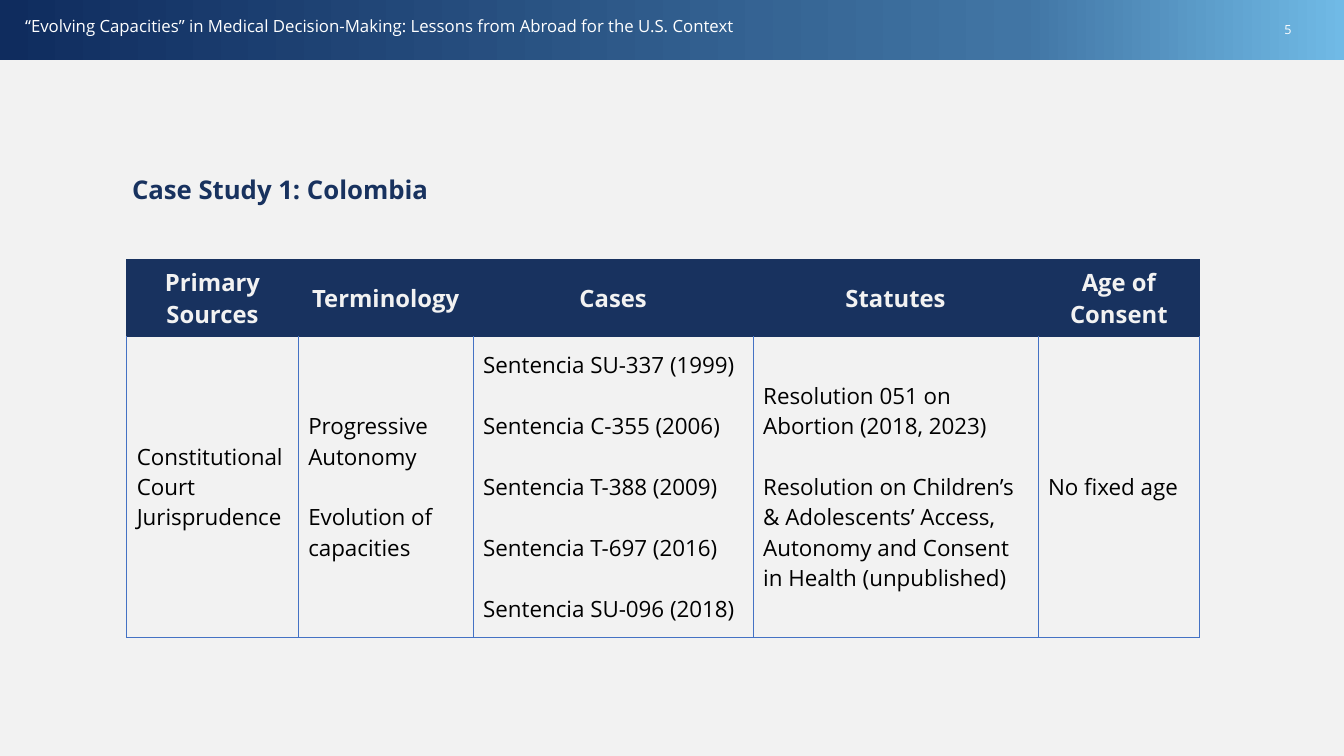
from copy import deepcopy

from lxml.etree import SubElement
from pptx import Presentation
from pptx.dml.color import RGBColor
from pptx.enum.shapes import MSO_SHAPE
from pptx.enum.text import MSO_ANCHOR, MSO_AUTO_SIZE, PP_ALIGN
from pptx.oxml.ns import qn
from pptx.util import Pt

NAVY, PALE, WHITE, BLACK, BLUE = "18325F", "F2F2F2", "FFFFFF", "000000", "4472C4"
FONT = "Open Sans"
HEADINGS = ["Primary Sources", "Terminology", "Cases", "Statutes", "Age of Consent"]
DETAILS = [
    ["Constitutional Court Jurisprudence"],
    ["Progressive Autonomy", "Evolution of capacities"],
    ["Sentencia SU-337 (1999)", "Sentencia C-355 (2006)", "Sentencia T-388 (2009)",
     "Sentencia T-697 (2016)", "Sentencia SU-096 (2018)"],
    ["Resolution 051 on Abortion (2018, 2023)",
     "Resolution on Children’s & Adolescents’ Access, Autonomy and Consent in Health (unpublished)"],
    ["No fixed age"],
]
COLUMNS = [122.5, 125, 200, 203.5, 115.5]
ROWS = [55, 214.5]


def rgb(color):
    return RGBColor.from_string(color)


def write(tf, lines, size, color, bold=False, align=PP_ALIGN.LEFT, spacing=1.0, gap=0):
    tf.word_wrap = True
    for i, line in enumerate(lines):
        p = tf.paragraphs[0] if i == 0 else tf.add_paragraph()
        p.alignment = align
        p.line_spacing = spacing
        p.space_before = Pt(gap if i else 0)
        r = p.add_run()
        r.text = line
        r.font.name = FONT
        r.font.size = Pt(size)
        r.font.bold = bold
        r.font.color.rgb = rgb(color)


def place(sp, x, y, w, h, anchor=MSO_ANCHOR.TOP):
    sp.left, sp.top, sp.width, sp.height = Pt(x), Pt(y), Pt(w), Pt(h)
    tf = sp.text_frame
    tf.auto_size = MSO_AUTO_SIZE.NONE
    tf.vertical_anchor = anchor
    tf.margin_left = tf.margin_right = tf.margin_top = tf.margin_bottom = Pt(3.6)
    return tf


def add_text(s, text, x, y, w, h, anchor=MSO_ANCHOR.TOP, **fmt):
    sp = s.shapes.add_textbox(Pt(x), Pt(y), Pt(w), Pt(h))
    write(place(sp, x, y, w, h, anchor), [text], **fmt)


def add_banner(s, x, y, w, h):
    sp = s.shapes.add_shape(MSO_SHAPE.RECTANGLE, Pt(x), Pt(y), Pt(w), Pt(h))
    sp.shadow.inherit = False
    sp.line.fill.background()
    sp.fill.gradient()
    sp.fill.gradient_angle = 0
    first = sp.fill._fill.gradient_stops[0]._gs
    first.addnext(deepcopy(first))
    stops = [(0, "0F2C5E"), (0.76, "4175A4"), (1, "70BAE6")]
    for stop, (position, color) in zip(sp.fill.gradient_stops, stops):
        stop.position = position
        stop.color.rgb = rgb(color)
    add_text(s, "“Evolving Capacities” in Medical Decision-Making: Lessons from Abroad for the U.S. Context",
             x + 14.4, y + 13, 842.4, 18.7, size=12, color=WHITE, spacing=0.8)
    add_text(s, "5", x + w - 46.2, y + 14.4, 12.2, 18, MSO_ANCHOR.MIDDLE,
             size=9, color=WHITE, align=PP_ALIGN.RIGHT)


def add_title(s, x, y, w, h):
    write(place(s.shapes.title, x, y, w, h), ["Case Study 1: Colombia"],
          18.4, NAVY, bold=True, spacing=0.7)


def set_borders(cell, **colors):
    tcPr = cell._tc.get_or_add_tcPr()
    for side in "LRTB":
        ln = SubElement(tcPr, qn(f"a:ln{side}"), w=str(Pt(0.75)))
        fill = SubElement(ln, qn("a:solidFill"))
        SubElement(fill, qn("a:srgbClr"), val=colors[side])


def add_case_table(s, x, y):
    frame = s.shapes.add_table(2, len(COLUMNS), Pt(x), Pt(y), Pt(sum(COLUMNS)), Pt(sum(ROWS)))
    table = frame.table
    table.horz_banding = False
    for row, height in zip(table.rows, ROWS):
        row.height = Pt(height)
    for i, width in enumerate(COLUMNS):
        table.columns[i].width = Pt(width)
        head, body = table.cell(0, i), table.cell(1, i)
        for cell in (head, body):
            cell.vertical_anchor = MSO_ANCHOR.MIDDLE
            cell.margin_left = cell.margin_right = Pt(7.2)
            cell.margin_top = cell.margin_bottom = Pt(3.6)
        set_borders(head, L=NAVY, R=NAVY, T=NAVY, B=NAVY)
        set_borders(body, L=BLUE, R=BLUE, T=NAVY, B=BLUE)
        head.fill.solid()
        head.fill.fore_color.rgb = rgb(NAVY)
        body.fill.background()
        write(head.text_frame, [HEADINGS[i]], 17, PALE, bold=True, align=PP_ALIGN.CENTER)
        write(body.text_frame, DETAILS[i], 16, BLACK, gap=21.8)


def main():
    prs = Presentation()
    prs.slide_width, prs.slide_height = Pt(960), Pt(540)
    s = prs.slides.add_slide(prs.slide_layouts[5])
    s.background.fill.solid()
    s.background.fill.fore_color.rgb = rgb(PALE)
    add_banner(s, 0, -2.2, 960, 45)
    add_title(s, 90.7, 126.7, 779, 33)
    add_case_table(s, 90.5, 185.5)
    prs.save("out.pptx")


if __name__ == "__main__":
    main()
